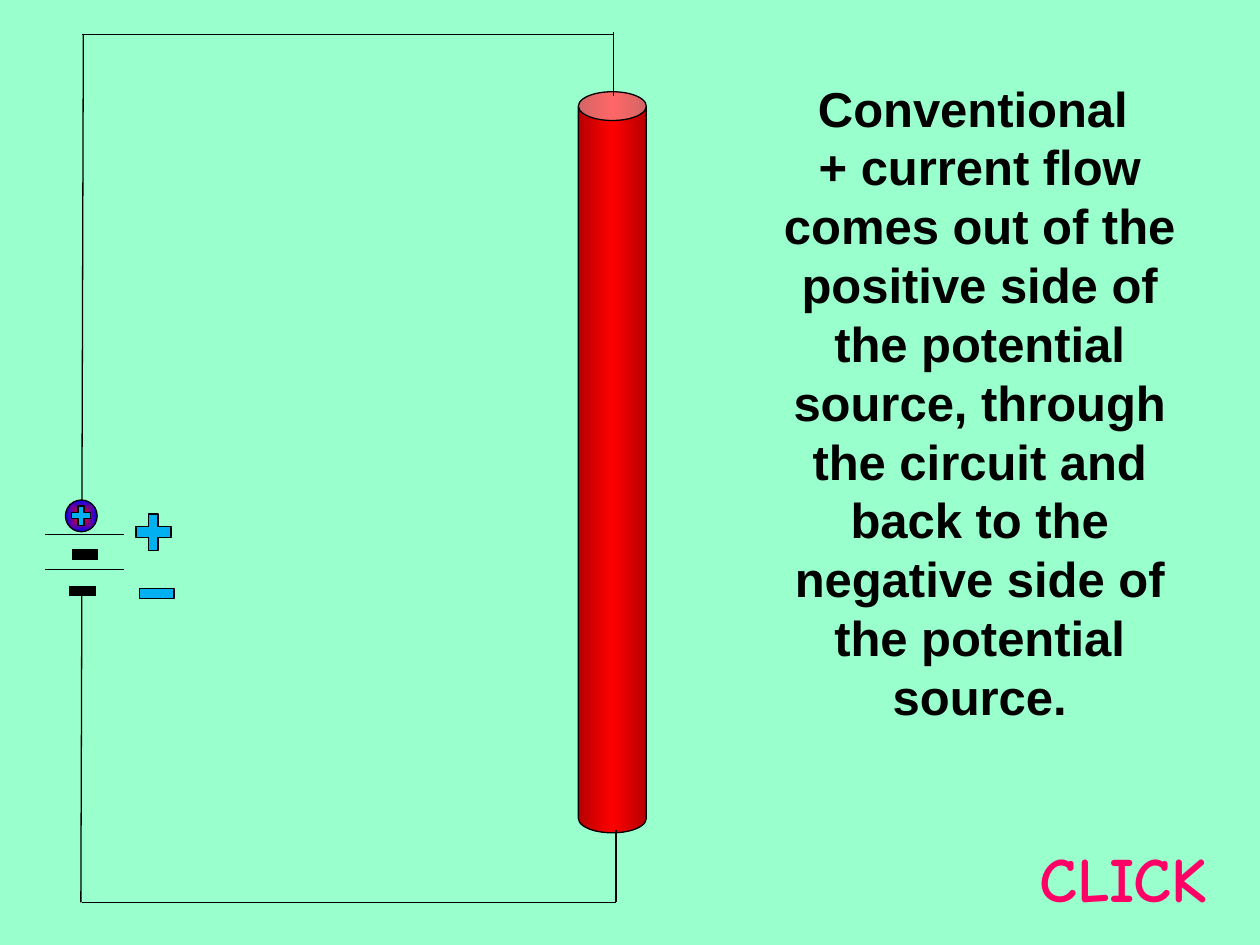
from lxml import etree
from pptx import Presentation
from pptx.dml.color import RGBColor
from pptx.enum.shapes import MSO_CONNECTOR, MSO_SHAPE
from pptx.enum.text import MSO_AUTO_SIZE, PP_ALIGN
from pptx.oxml import parse_xml
from pptx.oxml.ns import nsdecls, qn
from pptx.util import Cm, Pt

MINT = RGBColor(0x99, 0xFF, 0xCC)
BLACK = RGBColor(0, 0, 0)
SKY = RGBColor(0x00, 0xB0, 0xF0)
PINK = RGBColor(0xFF, 0x00, 0x66)
RED = RGBColor(0xFF, 0x00, 0x00)
DARK = RGBColor(0xB6, 0x00, 0x00)
BLUE = RGBColor(0x00, 0x00, 0xFF)

LINEAR = '<a:lin ang="0" scaled="1"/>'
RADIAL = ('<a:path path="shape"><a:fillToRect l="50000" t="50000" '
          'r="50000" b="50000"/></a:path>')

prs = Presentation()
prs.slide_width, prs.slide_height = Cm(25.4), Cm(19.05)
slide = prs.slides.add_slide(prs.slide_layouts[6])
slide.background.fill.solid()
slide.background.fill.fore_color.rgb = MINT


def add_part(home, kind, box, color=SKY):
    """Add an outlined shape with a plain fill."""
    part = home.add_shape(kind, *[Cm(n) for n in box])
    part.shadow.inherit = False
    part.fill.solid()
    part.fill.fore_color.rgb = color
    part.line.color.rgb = BLACK
    part.line.width = Pt(0.75)
    return part


def shade(part, colors, mode):
    """Swap the plain fill for evenly spaced gradient stops."""
    step = 100000 // (len(colors) - 1)
    stops = "".join(
        f'<a:gs pos="{i * step}"><a:srgbClr val="{c}"/></a:gs>'
        for i, c in enumerate(colors))
    grad = parse_xml(f'<a:gradFill {nsdecls("a")} rotWithShape="1">'
                     f'<a:gsLst>{stops}</a:gsLst>{mode}</a:gradFill>')
    props = part._element.spPr
    props.replace(props.find(qn("a:solidFill")), grad)


# Resistor rod
rod = add_part(slide.shapes, MSO_SHAPE.CAN, (11.66, 1.85, 1.37, 14.94), RED)
rod.adjustments[0] = 0.424
shade(rod, [DARK, RED, DARK], LINEAR)

# Wires and battery plates: x1, y1, x2, y2, width
lines = [
    (0.91, 11.48, 2.49, 11.48, 0.75),
    (1.40, 11.91, 1.93, 11.91, 6),
    (12.37, 1.93, 12.37, 0.64, 0.75),
    (12.37, 0.69, 1.65, 0.69, 0.75),
    (1.68, 0.69, 1.65, 10.72, 0.75),
    (1.65, 11.94, 1.63, 18.19, 0.75),
    (1.65, 18.19, 12.42, 18.19, 0.75),
    (12.42, 18.19, 12.42, 16.74, 0.75),
    (0.91, 10.77, 2.49, 10.77, 0.75),
    (1.45, 11.18, 1.98, 11.18, 6),
]
for *ends, width in lines:
    wire = slide.shapes.add_connector(
        MSO_CONNECTOR.STRAIGHT, *[Cm(n) for n in ends])
    wire.line.color.rgb = BLACK
    wire.line.width = Pt(width)
    etree.SubElement(wire._element.spPr, qn("a:effectLst"))

# Explanation and prompt
texts = [
    ((15.09, 1.45, 9.32, 13.41), "Arial", 28, BLACK, 14,
     ["Conventional ",
      "+ current flow comes out of the positive side of the potential "
      "source, through the circuit and back to the negative side of the "
      "potential source."]),
    ((20.47, 16.79, 4.34, 1.8), "Comic Neue", 36, PINK, 0, ["CLICK"]),
]
for box, font, size, color, gap, rows in texts:
    frame = slide.shapes.add_textbox(*[Cm(n) for n in box]).text_frame
    frame.word_wrap = True
    frame.auto_size = MSO_AUTO_SIZE.SHAPE_TO_FIT_TEXT
    para = frame.paragraphs[0]
    para.alignment = PP_ALIGN.CENTER
    para.space_before = Pt(gap)
    for i, row in enumerate(rows):
        if i:
            para.add_line_break()
        run = para.add_run()
        run.text = row
        run.font.name = font
        run.font.size = Pt(size)
        run.font.bold = True
        run.font.color.rgb = color

# Positive charge at the battery
charge = slide.shapes.add_group_shape()
ball = add_part(charge.shapes, MSO_SHAPE.OVAL, (1.32, 10.08, 0.64, 0.64))
shade(ball, [RED, BLUE], RADIAL)
add_part(charge.shapes, MSO_SHAPE.MATH_PLUS, (1.37, 10.13, 0.53, 0.53))

# Battery signs
add_part(slide.shapes, MSO_SHAPE.RECTANGLE, (2.82, 11.86, 0.69, 0.2))
plus = add_part(slide.shapes, MSO_SHAPE.CROSS, (2.74, 10.36, 0.71, 0.74))
plus.adjustments[0] = 0.368

prs.save("out.pptx")
